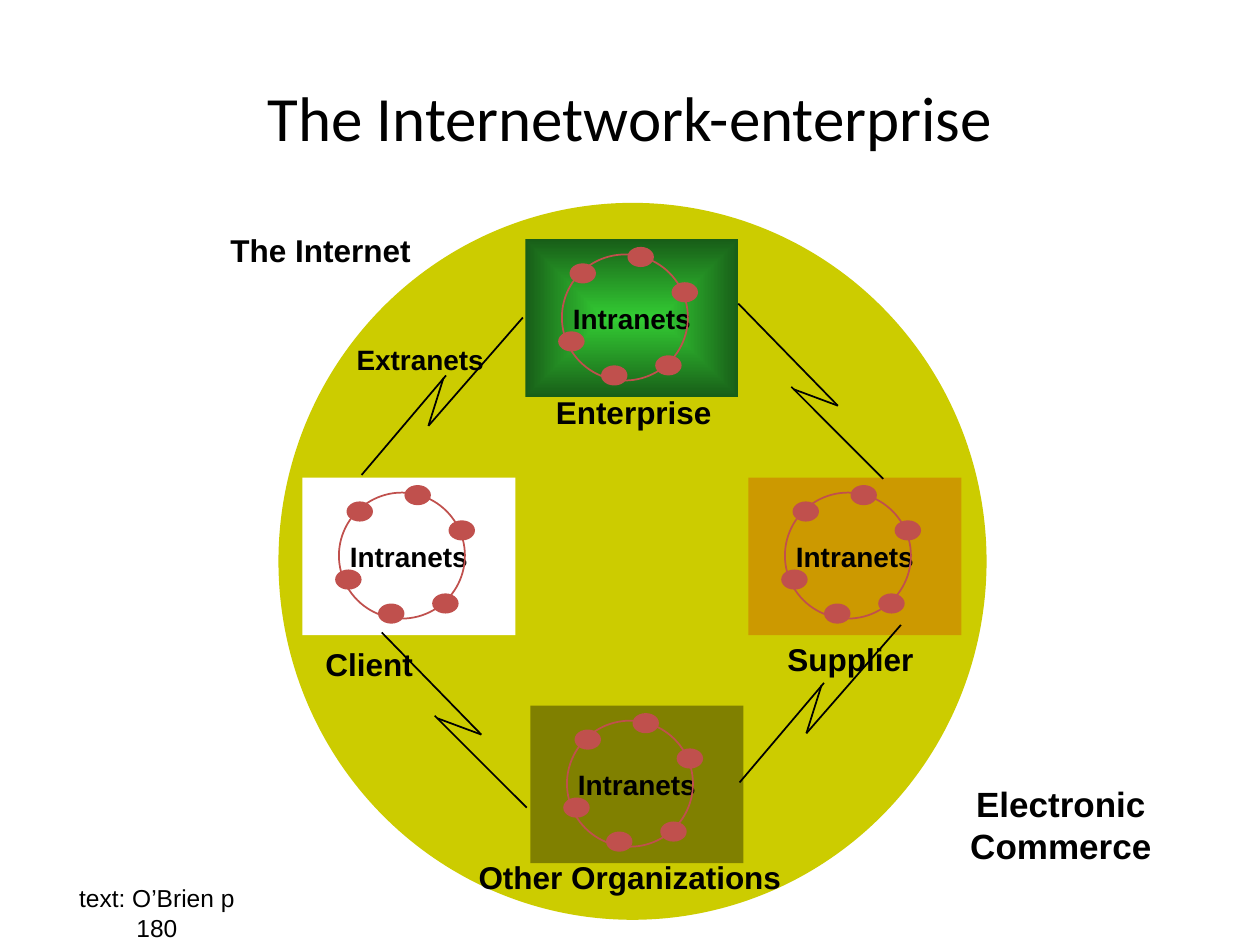
from dataclasses import dataclass

from lxml import etree
from pptx import Presentation
from pptx import util as u
from pptx.dml.color import RGBColor
from pptx.enum import shapes, text
from pptx.oxml import ns

BLACK = RGBColor(0x00, 0x00, 0x00)
WHITE = RGBColor(0xFF, 0xFF, 0xFF)
INTERNET_YELLOW = RGBColor(0xCC, 0xCC, 0x00)
NODE_RED = RGBColor(0xC0, 0x50, 0x4D)
ENTERPRISE_GREEN = RGBColor(0x33, 0xCC, 0x33)
ENTERPRISE_EDGE = RGBColor(0x18, 0x5E, 0x18)
SUPPLIER_ORANGE = RGBColor(0xCC, 0x99, 0x00)
OTHERS_OLIVE = RGBColor(0x80, 0x80, 0x00)

SITE_WIDTH, SITE_HEIGHT = 1.69, 1.25
NODE_WIDTH, NODE_HEIGHT = 0.21, 0.16
# Offsets from a site's top left corner
RING_OFFSET = (0.29, 0.12)
NODE_OFFSETS = [(0.35, 0.19), (0.26, 0.73), (0.6, 1.0),
                (1.03, 0.92), (1.16, 0.34), (0.81, 0.06)]

Point = tuple[float, float]
# Strokes of a lightning bolt, as offsets from its start
RISING_BOLT = [((0, 0), (0.67, -0.79)), ((0.65, -0.77), (0.53, -0.39)),
               ((0.53, -0.39), (1.28, -1.25))]
FALLING_BOLT = [((0, 0), (-0.73, -0.73)), ((-0.71, -0.71), (-0.36, -0.58)),
                ((-0.36, -0.58), (-1.15, -1.39))]


@dataclass
class Site:
    left: float
    top: float
    color: RGBColor
    edge: RGBColor | None = None


@dataclass
class Label:
    wording: str
    left: float
    top: float
    width: float
    height: float
    size: int = 18
    bold: bool = True
    side_margin: float = 0.1
    wraps: bool = False


@dataclass
class Bolt:
    start: Point
    strokes: list[tuple[Point, Point]]


SITES = [
    Site(4.17, 1.9, ENTERPRISE_GREEN, ENTERPRISE_EDGE),
    Site(5.94, 3.79, SUPPLIER_ORANGE),
    Site(4.21, 5.6, OTHERS_OLIVE),
    Site(2.4, 3.79, WHITE),
]
EXTRANETS = [
    Bolt((2.87, 3.77), RISING_BOLT),
    Bolt((5.87, 6.21), RISING_BOLT),
    Bolt((7.01, 3.8), FALLING_BOLT),
    Bolt((4.18, 6.41), FALLING_BOLT),
]
LABELS = [
    Label("The Internet", 1.73, 1.78, 1.63, 0.4),
    Label("Extranets", 2.73, 2.67, 1.21, 0.37, size=16),
    Label("Client", 2.48, 5.07, 0.9, 0.4),
    Label("Enterprise", 4.31, 3.07, 1.44, 0.4),
    Label("Supplier", 6.15, 5.03, 1.2, 0.4),
    Label("Other Organizations", 3.7, 6.76, 2.6, 0.4),
    Label("Electronic Commerce", 6.89, 6.33, 3.06, 0.43, size=20,
          side_margin=0.2, wraps=True),
    Label("text: O’Brien p 180", 0.34, 7.08, 1.81, 0.33, size=14, bold=False,
          side_margin=0.2, wraps=True),
]


def write(frame, wording: str, size: int, bold: bool = True,
          font: str = "Arial", wraps: bool = False) -> None:
    """Set one centred line of black text."""
    frame.text = wording
    frame.word_wrap = wraps
    frame.auto_size = text.MSO_AUTO_SIZE.NONE
    frame.vertical_anchor = text.MSO_ANCHOR.MIDDLE
    line = frame.paragraphs[0]
    line.alignment = text.PP_ALIGN.CENTER
    style = line.runs[0].font
    style.name, style.size, style.bold = font, u.Pt(size), bold
    style.color.rgb = BLACK


def add_plain(parent, kind, left: float, top: float, width: float,
              height: float, color: RGBColor | None = None):
    """Add a preset shape without outline or shadow."""
    shape = parent.add_shape(kind, u.Inches(left), u.Inches(top),
                             u.Inches(width), u.Inches(height))
    shape.shadow.inherit = False
    shape.line.fill.background()
    if color is None:
        shape.fill.background()
    else:
        shape.fill.solid()
        shape.fill.fore_color.rgb = color
    return shape


def shade_from_center(shape, center: RGBColor, edge: RGBColor) -> None:
    shape.fill.gradient()
    for stop, color in zip(shape.fill.gradient_stops, (center, edge)):
        stop.color.rgb = color
    gradient = shape.element.spPr.find(ns.qn("a:gradFill"))
    gradient.remove(gradient.find(ns.qn("a:lin")))
    shading = etree.SubElement(gradient, ns.qn("a:path"), path="shape")
    etree.SubElement(shading, ns.qn("a:fillToRect"),
                     dict.fromkeys("ltrb", "50000"))


def add_site(slide, site: Site) -> None:
    """Draw a coloured box with its ring of network nodes."""
    box = add_plain(slide.shapes, shapes.MSO_SHAPE.RECTANGLE, site.left,
                    site.top, SITE_WIDTH, SITE_HEIGHT, site.color)
    if site.edge is not None:
        shade_from_center(box, site.color, site.edge)
    write(box.text_frame, "Intranets", 16)

    network = slide.shapes.add_group_shape().shapes
    ring = add_plain(network, shapes.MSO_SHAPE.OVAL, site.left + RING_OFFSET[0],
                     site.top + RING_OFFSET[1], 1, 1)
    ring.line.color.rgb = NODE_RED
    ring.line.width = u.Pt(1)
    for dx, dy in NODE_OFFSETS:
        add_plain(network, shapes.MSO_SHAPE.OVAL, site.left + dx, site.top + dy,
                  NODE_WIDTH, NODE_HEIGHT, NODE_RED)


def add_bolt(slide, bolt: Bolt) -> None:
    x, y = bolt.start
    strokes = slide.shapes.add_group_shape().shapes
    for (x1, y1), (x2, y2) in bolt.strokes:
        stroke = strokes.add_connector(
            shapes.MSO_CONNECTOR.STRAIGHT, u.Inches(x + x1), u.Inches(y + y1),
            u.Inches(x + x2), u.Inches(y + y2))
        stroke.line.color.rgb = BLACK
        stroke.line.width = u.Pt(1)
        etree.SubElement(stroke.element.spPr, ns.qn("a:effectLst"))


def add_label(slide, label: Label) -> None:
    box = slide.shapes.add_textbox(u.Inches(label.left), u.Inches(label.top),
                                   u.Inches(label.width), u.Inches(label.height))
    frame = box.text_frame
    frame.margin_left = frame.margin_right = u.Inches(label.side_margin)
    write(frame, label.wording, label.size, label.bold, wraps=label.wraps)


def main() -> None:
    deck = Presentation()
    deck.slide_width, deck.slide_height = u.Inches(10), u.Inches(7.5)
    slide = deck.slides.add_slide(deck.slide_layouts[5])

    # Title
    title = slide.shapes.title
    title.left, title.top = u.Inches(0.5), u.Inches(0.3)
    title.width, title.height = u.Inches(9), u.Inches(1.25)
    write(title.text_frame, "The Internetwork-enterprise", 36, bold=False,
          font="Calibri", wraps=True)

    # The Internet, with its sites and the extranets between them
    add_plain(slide.shapes, shapes.MSO_SHAPE.OVAL, 2.21, 1.61, 5.62, 5.69,
              INTERNET_YELLOW)
    for site in SITES:
        add_site(slide, site)
    for extranet in EXTRANETS:
        add_bolt(slide, extranet)

    # Labels
    for label in LABELS:
        add_label(slide, label)

    deck.save("out.pptx")


if __name__ == "__main__":
    main()
